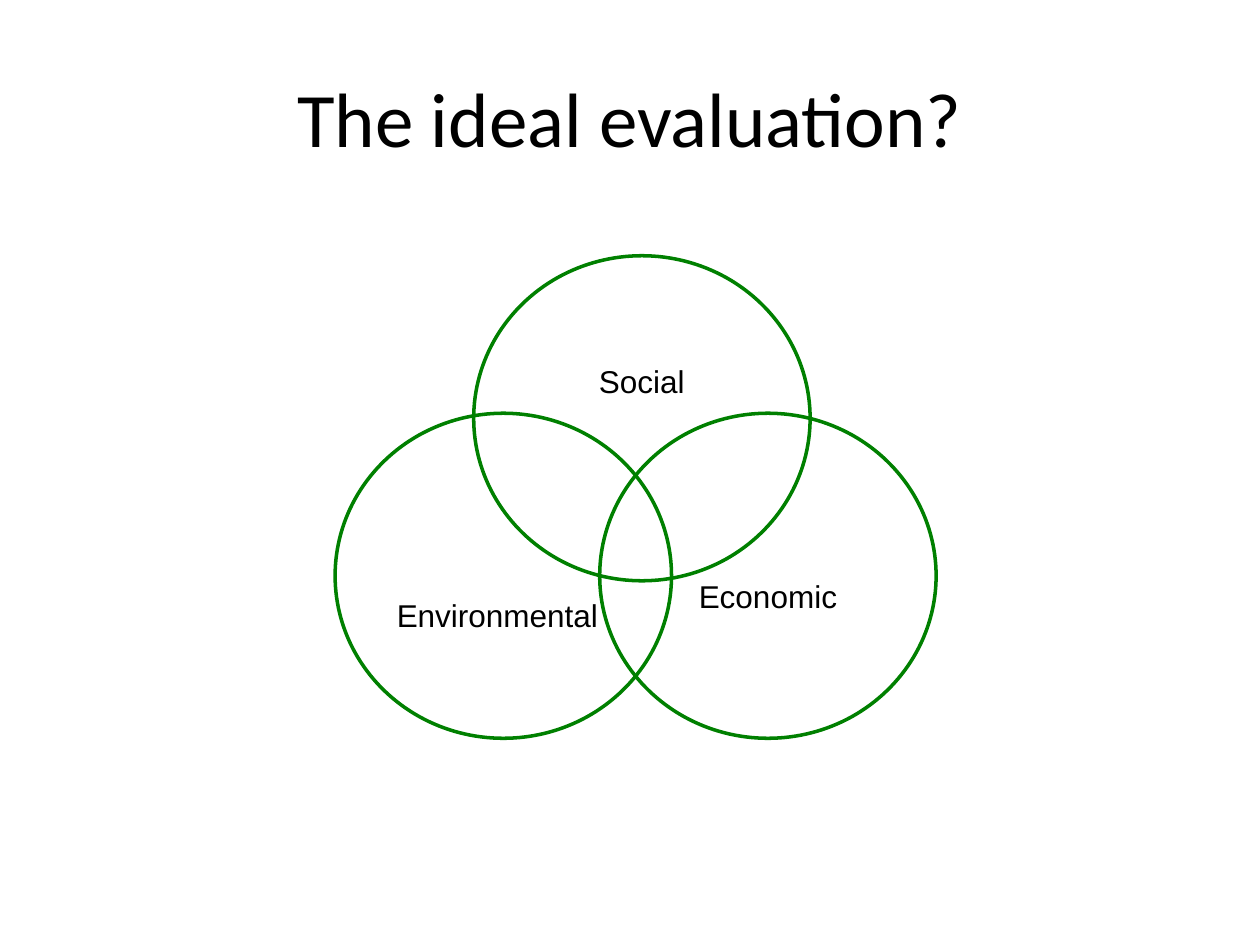
from dataclasses import dataclass

from pptx import Presentation
from pptx.dml.color import RGBColor
from pptx.enum.shapes import MSO_SHAPE
from pptx.enum.text import MSO_ANCHOR, PP_ALIGN
from pptx.util import Inches, Pt

OVAL = MSO_SHAPE.OVAL
MIDDLE = MSO_ANCHOR.MIDDLE
LEFT, CENTER = PP_ALIGN.LEFT, PP_ALIGN.CENTER

COLORS = {"text": "000000", "ring": "008000", "fill": "FFFFFF"}
WIDTH, HEIGHT = 2.67, 2.58
PAD = 0.05


@dataclass
class Ring:
    label: str
    left: float
    top: float
    shift: float  # label offset below the ring's centre
    align: PP_ALIGN = CENTER
    filled: bool = False


RINGS = [
    Ring("Social", 3.76, 2.03, -0.3, filled=True),
    Ring("Environmental", 2.66, 3.28, 0.31, align=LEFT),
    Ring("Economic", 4.76, 3.28, 0.16),
]


def color(name: str) -> RGBColor:
    return RGBColor.from_string(COLORS[name])


def write(frame, text: str, font: str, size: int, align: PP_ALIGN) -> None:
    frame.word_wrap = True
    frame.vertical_anchor = MIDDLE
    para = frame.paragraphs[0]
    para.text = text
    para.alignment = align
    para.font.name = font
    para.font.size = Pt(size)
    para.font.color.rgb = color("text")


def draw_ring(slide, ring: Ring) -> None:
    shape = slide.shapes.add_shape(
        OVAL, Inches(ring.left), Inches(ring.top), Inches(WIDTH), Inches(HEIGHT))
    shape.shadow.inherit = False
    if ring.filled:
        shape.fill.solid()
        shape.fill.fore_color.rgb = color("fill")
    else:
        shape.fill.background()
    shape.line.color.rgb = color("ring")
    shape.line.width = Pt(2)
    # A one-sided margin moves centred text by half its size
    frame = shape.text_frame
    frame.margin_top = Inches(PAD + 2 * max(ring.shift, 0))
    frame.margin_bottom = Inches(PAD + 2 * max(-ring.shift, 0))
    write(frame, ring.label, "Arial", 18, ring.align)


def main() -> None:
    deck = Presentation()
    deck.slide_width, deck.slide_height = Inches(10), Inches(7.5)
    slide = deck.slides.add_slide(deck.slide_layouts[6])

    # Venn diagram
    for ring in RINGS:
        draw_ring(slide, ring)

    # Title
    title = slide.shapes.add_textbox(
        Inches(0.5), Inches(0.3), Inches(9), Inches(1.25))
    write(title.text_frame, "The ideal evaluation?", "Calibri", 44, CENTER)

    deck.save("out.pptx")


if __name__ == "__main__":
    main()
